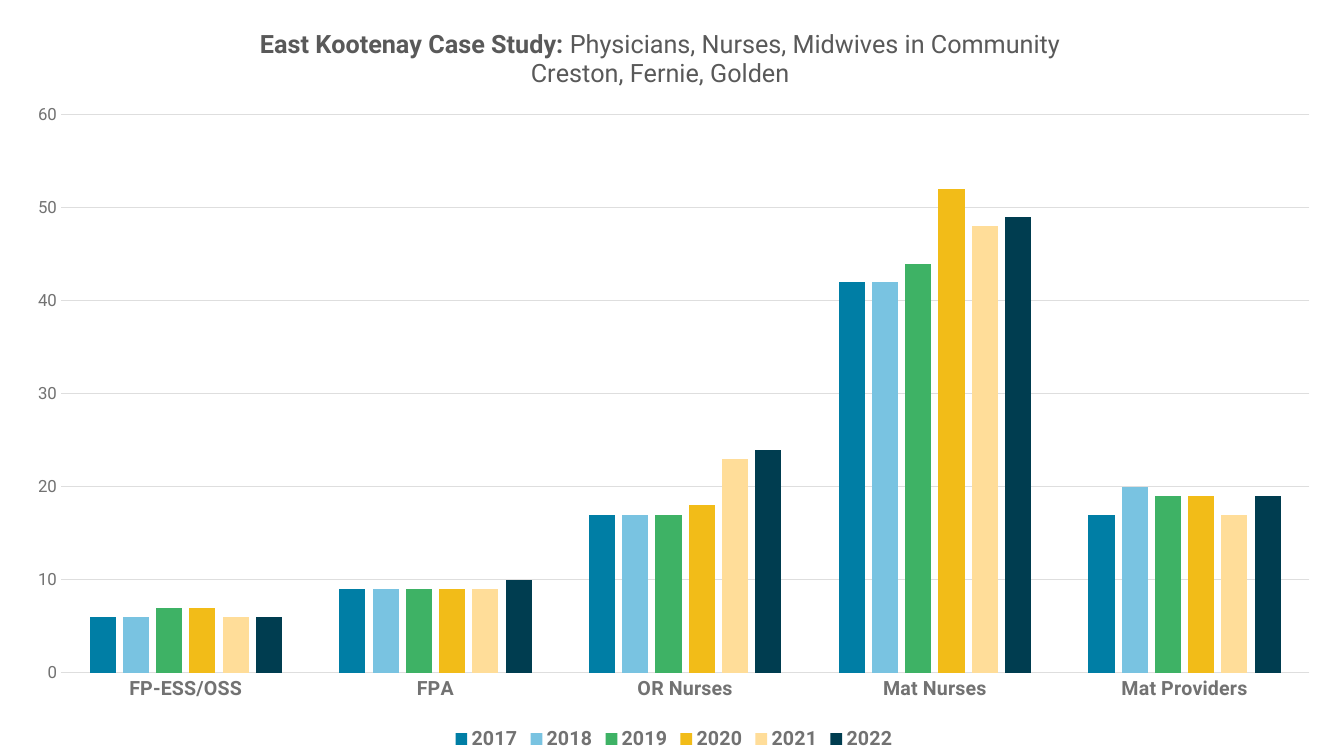
from pptx import Presentation
from pptx.chart.data import CategoryChartData
from pptx.dml.color import RGBColor
from pptx.enum.chart import XL_CHART_TYPE, XL_LEGEND_POSITION, XL_TICK_MARK
from pptx.enum.text import PP_ALIGN
from pptx.oxml import parse_xml
from pptx.oxml.ns import nsdecls, qn
from pptx.util import Emu, Pt

COLUMNS = XL_CHART_TYPE.COLUMN_CLUSTERED
BOTTOM = XL_LEGEND_POSITION.BOTTOM
NO_TICK = XL_TICK_MARK.NONE
CENTER = PP_ALIGN.CENTER

EMU_PER_PX = 914400 / 100.8
SLIDE = (1344, 756)
CHART_BOX = (12, 0, 1324, 756)

COLORS = {
    "title": "595959",
    "label": "727272",
    "grid": "DEDEDE",
    "2017": "007EA5",
    "2018": "79C3E1",
    "2019": "3EB265",
    "2020": "F2BC18",
    "2021": "FFDD99",
    "2022": "003D50",
}
ROLES = ["FP-ESS/OSS", "FPA", "OR Nurses", "Mat Nurses", "Mat Providers"]
HEADCOUNTS = {
    "2017": (6, 9, 17, 42, 17),
    "2018": (6, 9, 17, 42, 20),
    "2019": (7, 9, 17, 44, 19),
    "2020": (7, 9, 18, 52, 19),
    "2021": (6, 9, 23, 48, 17),
    "2022": (6, 10, 24, 49, 19),
}
TITLE_LINES = [
    [("East Kootenay Case Study: ", True),
     ("Physicians, Nurses, Midwives in Community", False)],
    [("Creston, Fernie, Golden", False)],
]


def px(length):
    return Emu(round(length * EMU_PER_PX))


def color(name):
    return RGBColor.from_string(COLORS[name])


class ChartSlide:
    """Holds the style and the current slide."""

    font_name = "Roboto"

    def __init__(self, deck):
        self.slide = deck.slides.add_slide(deck.slide_layouts[6])

    def style(self, font, size, color_name, bold=False):
        font.name = self.font_name
        font.size = Pt(size)
        font.bold = bold
        font.color.rgb = color(color_name)

    def line(self, line_format):
        line_format.color.rgb = color("grid")
        line_format.width = Pt(0.75)

    def place(self, part, index, x, y, width=None, height=None, inner=False):
        """Fix a chart part at fractions of the chart's size."""
        old = part.find(qn("c:layout"))
        if old is not None:
            part.remove(old)
        settings = [("layoutTarget", "inner")] if inner else []
        settings += [("xMode", "edge"), ("yMode", "edge"), ("x", x), ("y", y)]
        if width:
            settings += [("w", width), ("h", height)]
        body = "".join(f'<c:{tag} val="{value}"/>' for tag, value in settings)
        part.insert(index, parse_xml(
            f'<c:layout {nsdecls("c")}><c:manualLayout>{body}'
            "</c:manualLayout></c:layout>"))

    def columns(self, box, categories, series_values):
        data = CategoryChartData(number_format="General")
        data.categories = categories
        for name, values in series_values.items():
            data.add_series(name, values)
        frame = self.slide.shapes.add_chart(COLUMNS, *map(px, box), data)
        chart = frame.chart
        self.style(chart.font, 10, "label")
        plot = chart.plots[0]
        plot.vary_by_categories = False
        plot.gap_width = 219
        plot.overlap = -27
        for series in plot.series:
            series.format.fill.solid()
            series.format.fill.fore_color.rgb = color(series.name)
        plot_area = chart.element.find(".//" + qn("c:plotArea"))
        self.place(plot_area, 0, 0.037, 0.152, 0.943, 0.738, inner=True)
        return chart

    def axes(self, chart, top, step):
        role_axis, count_axis = chart.category_axis, chart.value_axis
        for axis, size, bold in ((role_axis, 14, True), (count_axis, 12, False)):
            axis.major_tick_mark = axis.minor_tick_mark = NO_TICK
            self.style(axis.tick_labels.font, size, "label", bold)
        self.line(role_axis.format.line)
        count_axis.format.line.fill.background()
        count_axis.minimum_scale = 0
        count_axis.maximum_scale = top
        count_axis.major_unit = step
        count_axis.has_major_gridlines = True
        self.line(count_axis.major_gridlines.format.line)

    def title(self, chart, lines):
        chart.has_title = True
        frame = chart.chart_title.text_frame
        for number, runs in enumerate(lines):
            paragraph = frame.add_paragraph() if number else frame.paragraphs[0]
            paragraph.alignment = CENTER
            self.style(paragraph.font, 18, "title")
            for text, bold in runs:
                run = paragraph.add_run()
                run.text = text
                self.style(run.font, 18, "title", bold)
        chart.chart_title.include_in_layout = False
        self.place(chart.element.find(".//" + qn("c:title")), 1, 0.185, 0.033)

    def legend(self, chart):
        chart.has_legend = True
        chart.legend.position = BOTTOM
        chart.legend.include_in_layout = False
        self.style(chart.legend.font, 14, "label", True)
        legend = chart.element.find(".//" + qn("c:legend"))
        self.place(legend, 1, 0.33, 0.955, 0.34, 0.045)


def main():
    deck = Presentation()
    deck.slide_width, deck.slide_height = map(px, SLIDE)
    page = ChartSlide(deck)

    # Headcounts by role and year
    headcounts = page.columns(CHART_BOX, ROLES, HEADCOUNTS)
    page.axes(headcounts, top=60, step=10)

    # Title and legend
    page.title(headcounts, TITLE_LINES)
    page.legend(headcounts)

    deck.save("out.pptx")


if __name__ == "__main__":
    main()
